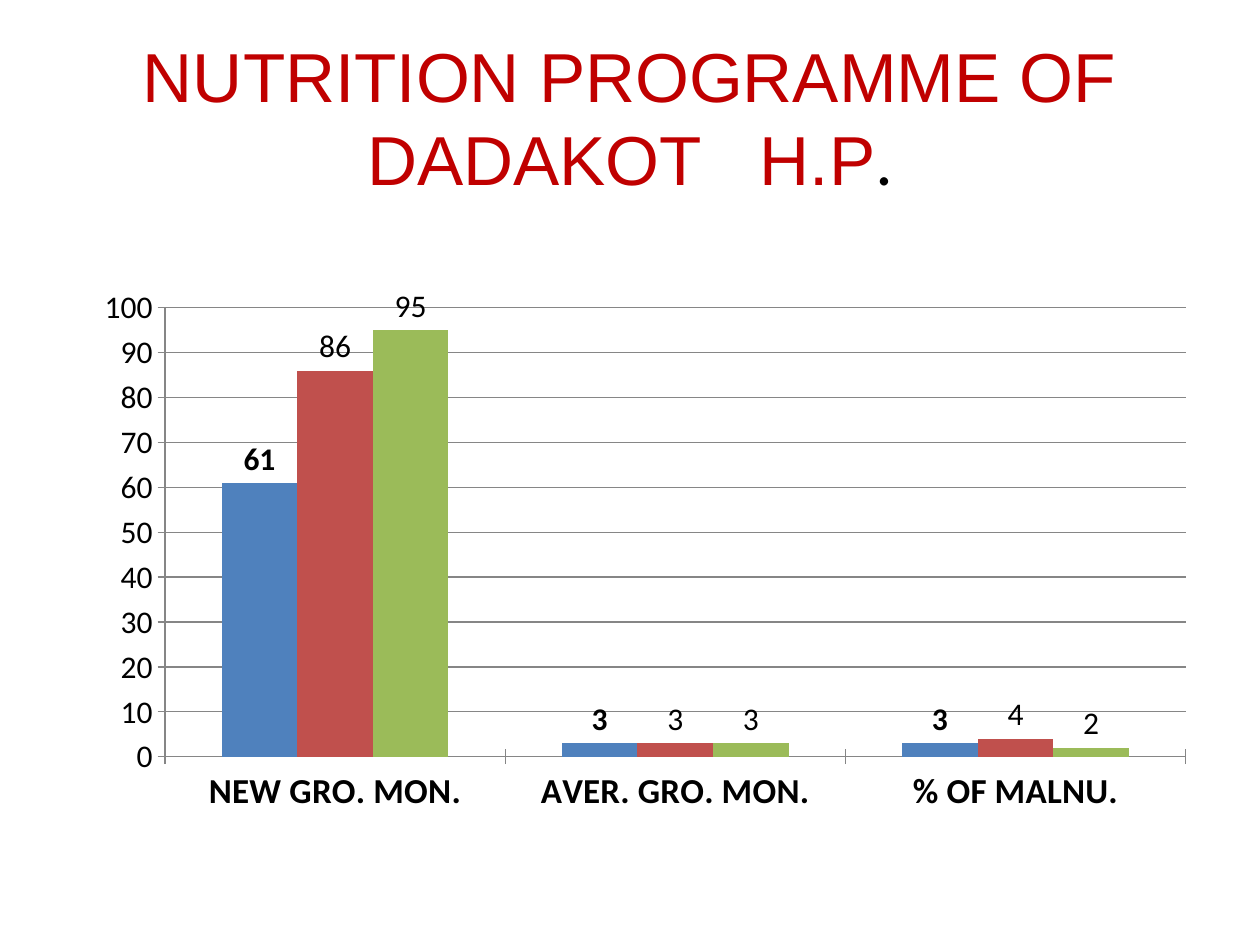
from lxml import etree
from pptx import Presentation
from pptx.chart.data import CategoryChartData
from pptx.dml.color import RGBColor
from pptx.enum.chart import XL_CHART_TYPE, XL_LABEL_POSITION, XL_TICK_MARK
from pptx.enum.text import MSO_ANCHOR, PP_ALIGN
from pptx.oxml.ns import qn
from pptx.util import Pt

COLUMN = XL_CHART_TYPE.COLUMN_CLUSTERED
ABOVE = XL_LABEL_POSITION.OUTSIDE_END
CROSS = XL_TICK_MARK.CROSS
MIDDLE = MSO_ANCHOR.MIDDLE
CENTER = PP_ALIGN.CENTER

COLORS = {
    "title": "C00000", "text": "000000", "line": "868686",
    "blue": "4F81BD", "red": "C0504D", "green": "9BBB59",
}


def color(name):
    return RGBColor.from_string(COLORS[name])


def write(par, text, face="Arial", size=39.6, ink="title", space=0):
    run = par.add_run()
    run.text = text
    run.font.name = face
    run.font.size = Pt(size)
    run.font.color.rgb = color(ink)
    if space:
        run._r.get_or_add_rPr().set("spc", str(space * 100))


deck = Presentation()
deck.slide_width, deck.slide_height = Pt(720), Pt(540)
slide = deck.slides.add_slide(deck.slide_layouts[6])

# Title, with a wide gap before the last word
box = slide.shapes.add_textbox(Pt(36), Pt(21.6), Pt(648), Pt(90))
frame = box.text_frame
frame.word_wrap = True
frame.vertical_anchor = MIDDLE
par = frame.paragraphs[0]
par.alignment = CENTER
write(par, "NUTRITION PROGRAMME OF DADAKOT")
write(par, " ", space=22)
write(par, "H.P")
write(par, ".", face="Calibri", ink="text")

# Chart data
data = CategoryChartData()
data.categories = ["NEW GRO. MON.", "AVER. GRO. MON.", "% OF MALNU."]
data.add_series("Series 1", (61, 3, 3))
data.add_series("Series 2", (86, 3, 4))
data.add_series("Series 3", (95, 3, 2))
chart = slide.shapes.add_chart(
    COLUMN, Pt(36), Pt(126), Pt(648), Pt(356.4), data).chart
chart.has_title = False
chart.has_legend = False
chart.font.name = "Calibri"
chart.font.size = Pt(18)
chart.font.color.rgb = color("text")

# Columns and their labels
plot = chart.plots[0]
plot.gap_width = 150
plot.overlap = 0
plot.vary_by_categories = False
for series, name in zip(plot.series, ("blue", "red", "green")):
    series.format.fill.solid()
    series.format.fill.fore_color.rgb = color(name)
    labels = series.data_labels
    labels.show_value = True
    labels.position = ABOVE
    labels.font.name = "Calibri"
    labels.font.size = Pt(18)
    labels.font.bold = name == "blue"
    labels.font.color.rgb = color("text")

# Axes and gridlines
cats, vals = chart.category_axis, chart.value_axis
vals.minimum_scale, vals.maximum_scale, vals.major_unit = 0, 100, 10
vals.has_major_gridlines = True
cats.tick_labels.font.size = Pt(20)
cats.tick_labels.font.bold = True
for axis in (cats, vals):
    axis.major_tick_mark = CROSS
for part in (cats, vals, vals.major_gridlines):
    part.format.line.color.rgb = color("line")
    part.format.line.width = Pt(0.75)

# Plot area as shares of the chart
area = chart._chartSpace.find(".//" + qn("c:plotArea"))
for old in area.findall(qn("c:layout")):
    area.remove(old)
layout = etree.Element(qn("c:layout"))
area.insert(0, layout)
manual = etree.SubElement(layout, qn("c:manualLayout"))
for tag, val in (("layoutTarget", "inner"), ("xMode", "edge"),
                 ("yMode", "edge"), ("x", "0.09"), ("y", "0.14"),
                 ("w", "0.9"), ("h", "0.72")):
    etree.SubElement(manual, qn("c:" + tag)).set("val", val)

deck.save("out.pptx")
